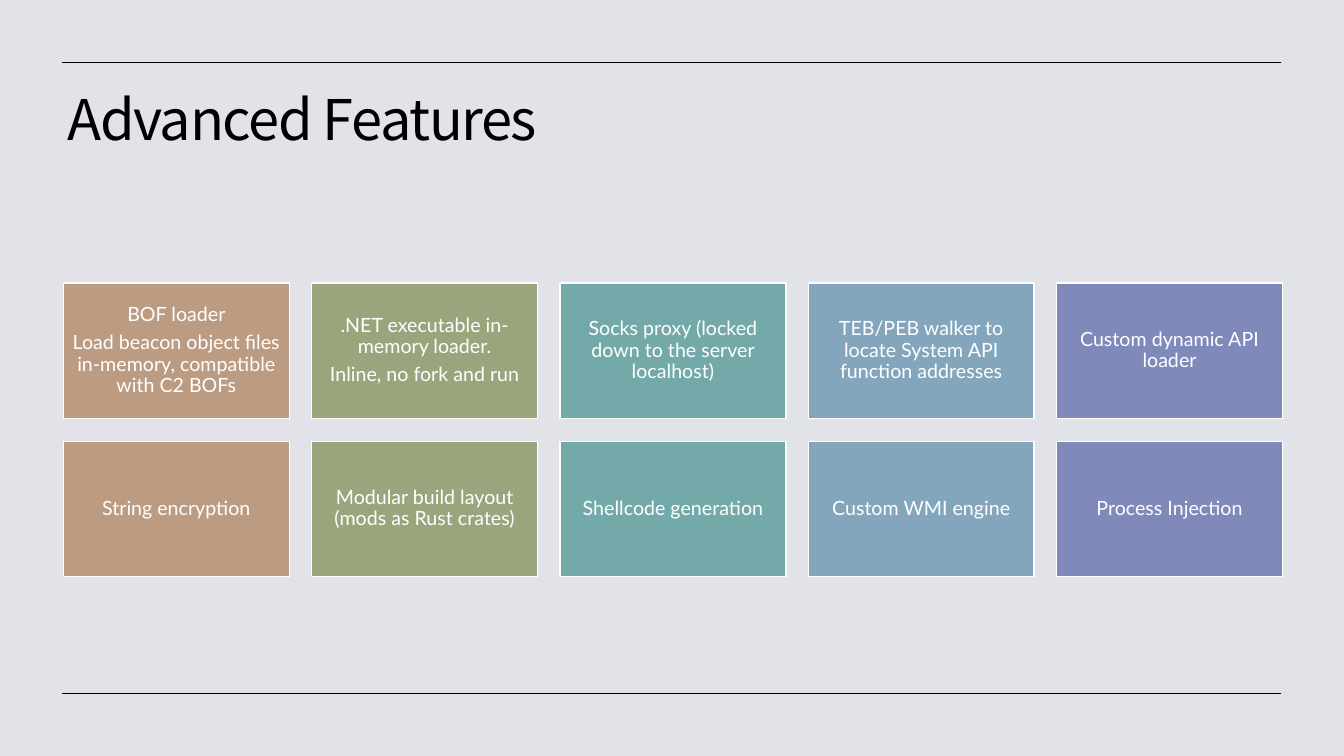
from pptx import Presentation
from pptx.dml.color import RGBColor
from pptx.enum.shapes import MSO_CONNECTOR, MSO_SHAPE
from pptx.enum.text import MSO_ANCHOR, PP_ALIGN
from pptx.oxml.ns import qn
from pptx.util import Inches, Pt
from lxml import etree


def rgb(value):
    return RGBColor.from_string(value)


def write(sp, text, size, font, color, align=PP_ALIGN.LEFT, anchor=MSO_ANCHOR.TOP,
          inset_x=0.1, inset_y=0.05, after=0, spacing=0):
    tf = sp.text_frame
    tf.word_wrap = True
    tf.vertical_anchor = anchor
    tf.margin_left = tf.margin_right = Inches(inset_x)
    tf.margin_top = tf.margin_bottom = Inches(inset_y)
    for i, line in enumerate(text.split("\n")):
        p = tf.add_paragraph() if i else tf.paragraphs[0]
        p.alignment = align
        p.line_spacing = 0.9
        p.space_after = Pt(after)
        r = p.add_run()
        r.text = line
        r.font.size = Pt(size)
        r.font.name = font
        r.font.color.rgb = rgb(color)
        if spacing:
            r.font._element.set("spc", str(spacing * 100))


prs = Presentation()
prs.slide_width = Inches(13.33)
prs.slide_height = Inches(7.5)
s = prs.slides.add_slide(prs.slide_layouts[6])
s.background.fill.solid()
s.background.fill.fore_color.rgb = rgb("E2E3E8")

title = s.shapes.add_textbox(Inches(0.57), Inches(0.86), Inches(12.15), Inches(1.15))
write(title, "Advanced Features", 40, "Noto Sans CJK KR", "000000", spacing=-1)

for y in (0.62, 6.88):
    rule = s.shapes.add_connector(MSO_CONNECTOR.STRAIGHT, Inches(12.71), Inches(y),
                                  Inches(0.62), Inches(y))
    rule.line.color.rgb = rgb("000000")
    rule.line.width = Pt(0.5)
    etree.SubElement(rule._element.spPr, qn("a:effectLst"))

colors = ["BB9B82", "9AA57D", "73A9A9", "84A6BD", "7F89BA"]
features = [
    ["BOF loader\nLoad beacon object files in-memory, compatible with C2 BOFs",
     ".NET executable in-memory loader.\nInline, no fork and run",
     "Socks proxy (locked down to the server localhost)",
     "TEB/PEB walker to locate System API function addresses",
     "Custom dynamic API loader"],
    ["String encryption",
     "Modular build layout (mods as Rust crates)",
     "Shellcode generation",
     "Custom WMI engine",
     "Process Injection"],
]
for row, texts in enumerate(features):
    for col, (text, color) in enumerate(zip(texts, colors)):
        sp = s.shapes.add_shape(MSO_SHAPE.RECTANGLE, Inches(0.63 + 2.4625 * col),
                                Inches(2.81 + 1.57 * row), Inches(2.24), Inches(1.34))
        sp.shadow.inherit = False
        sp.fill.solid()
        sp.fill.fore_color.rgb = rgb(color)
        sp.line.color.rgb = rgb("FFFFFF")
        sp.line.width = Pt(1)
        write(sp, text, 14, "Lato", "FFFFFF", align=PP_ALIGN.CENTER,
              anchor=MSO_ANCHOR.MIDDLE, inset_x=0.06, inset_y=0.06, after=5)

prs.save("out.pptx")
